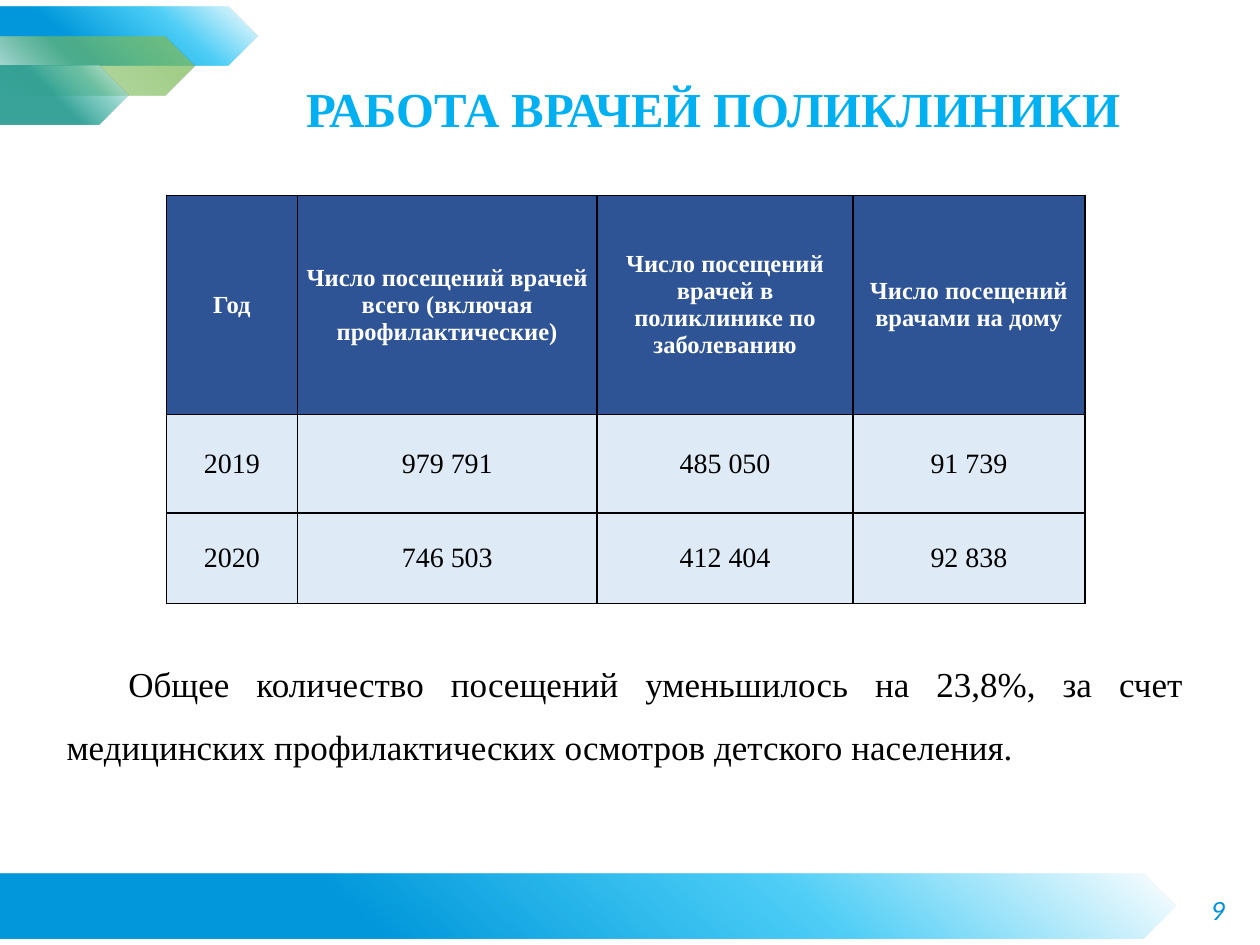
import pptx
import pptx.util
import pptx.oxml
import pptx.oxml.ns
import pptx.dml.color
import pptx.enum.shapes
import pptx.enum.text
import lxml.etree

RGBColor = pptx.dml.color.RGBColor
Pt = pptx.util.Pt
PP_ALIGN = pptx.enum.text.PP_ALIGN
MIDDLE = pptx.enum.text.MSO_ANCHOR.MIDDLE
qn = pptx.oxml.ns.qn

COLUMNS, ROWS = 100, 75
UNIT = pptx.util.Inches(0.1)

BLACK = RGBColor(0, 0, 0)
WHITE = RGBColor(0xFF, 0xFF, 0xFF)
SKY = RGBColor(0x00, 0xB0, 0xF0)
NUMBER_BLUE = RGBColor(0x04, 0x93, 0xDA)
HEADER_BLUE = RGBColor(0x2F, 0x54, 0x96)
PALE_BLUE = RGBColor(0xDE, 0xEA, 0xF6)
DEEP_BLUE = RGBColor(0x03, 0x98, 0xDB)
CYAN = RGBColor(0x05, 0xBA, 0xF3)
GREEN = RGBColor(0x7D, 0xBB, 0x59)
TEAL = RGBColor(0x22, 0x9A, 0x8F)
LIGHT_TEAL = RGBColor(0x3C, 0xB0, 0xA2)

SERIF = "Times New Roman"
BLUE_STOPS = [(31, DEEP_BLUE, 100), (68, CYAN, 70), (100, WHITE, 70)]
GREEN_STOPS = [(0, WHITE, 81), (43, GREEN, 59), (100, GREEN, 77)]
TEAL_STOPS = [(44, TEAL, 89), (70, LIGHT_TEAL, 61), (100, WHITE, 70)]

HEADERS = [
    "Год",
    "Число посещений врачей всего (включая профилактические)",
    "Число посещений врачей в поликлинике по заболеванию",
    "Число посещений врачами на дому",
]
VISITS = [
    ["2019", "979 791", "485 050", "91 739"],
    ["2020", "746 503", "412 404", "92 838"],
]
COLUMN_SHARES = [1.04, 2.38, 2.03, 1.84]
ROW_SHARES = [1.74, 0.78, 0.72]


def grid(*values):
    return [int(v * UNIT) for v in values]


def set_font(p, size, color, name=SERIF, bold=False, italic=False):
    p.font.size = Pt(size)
    p.font.name = name
    p.font.bold = bold
    p.font.italic = italic
    p.font.color.rgb = color


def add_gradient(sp, stops, angle=None):
    sub = lxml.etree.SubElement
    grad = lxml.etree.Element(qn("a:gradFill"), rotWithShape="1")
    gs_list = sub(grad, qn("a:gsLst"))
    for position, color, alpha in stops:
        gs = sub(gs_list, qn("a:gs"), pos=str(position * 1000))
        clr = sub(gs, qn("a:srgbClr"), val=str(color))
        if alpha < 100:
            sub(clr, qn("a:alpha"), val=str(alpha * 1000))
    if angle is None:
        circle = sub(grad, qn("a:path"), path="circle")
        sub(circle, qn("a:fillToRect"), t="100000", r="100000")
    else:
        sub(grad, qn("a:lin"), ang=str(angle * 60000), scaled="0")
    sp._element.spPr.find(qn("a:prstGeom")).addnext(grad)


def add_ribbon(s, box, stops, angle=None):
    sp = s.shapes.add_shape(pptx.enum.shapes.MSO_SHAPE.PENTAGON, *grid(*box))
    sp.shadow.inherit = False
    sp.line.fill.background()
    add_gradient(sp, stops, angle)


def add_text(s, box, text, align):
    tf = s.shapes.add_textbox(*grid(*box)).text_frame
    tf.word_wrap = True
    p = tf.paragraphs[0]
    p.text = text
    p.alignment = align
    return tf, p


def add_title(s, box):
    tf, p = add_text(s, box, "РАБОТА ВРАЧЕЙ ПОЛИКЛИНИКИ", PP_ALIGN.CENTER)
    tf.vertical_anchor = MIDDLE
    set_font(p, 27.9, SKY, bold=True)


def add_page_number(s, box):
    tf, p = add_text(s, box, "9", PP_ALIGN.CENTER)
    tf.vertical_anchor = MIDDLE
    set_font(p, 16, NUMBER_BLUE, "Calibri", italic=True)


def add_conclusion(s, box):
    text = ("Общее количество посещений уменьшилось на 23,8%, за счет "
            "медицинских профилактических осмотров детского населения.")
    tf, p = add_text(s, box, text, PP_ALIGN.JUSTIFY)
    tf.auto_size = pptx.enum.text.MSO_AUTO_SIZE.SHAPE_TO_FIT_TEXT
    p.line_spacing = 1.5
    p._p.get_or_add_pPr().set("indent", str(grid(4.9)[0]))
    set_font(p, 20, BLACK)


def add_borders(cell):
    tc_pr = cell._tc.get_or_add_tcPr()
    for i, side in enumerate(("lnL", "lnR", "lnT", "lnB")):
        ln = lxml.etree.Element(qn("a:" + side), w=str(Pt(1)))
        fill = lxml.etree.SubElement(ln, qn("a:solidFill"))
        lxml.etree.SubElement(fill, qn("a:srgbClr"), val=str(BLACK))
        tc_pr.insert(i, ln)


def add_cell(cell, text, is_header):
    cell.fill.solid()
    cell.fill.fore_color.rgb = HEADER_BLUE if is_header else PALE_BLUE
    cell.vertical_anchor = MIDDLE
    cell.margin_left = cell.margin_right = grid(0.7)[0]
    cell.margin_top = cell.margin_bottom = 0
    p = cell.text_frame.paragraphs[0]
    p.text = text
    p.alignment = PP_ALIGN.CENTER
    set_font(p, 14 if is_header else 16, WHITE if is_header else BLACK, bold=is_header)
    add_borders(cell)


def add_visits_table(s, box):
    rows = [HEADERS] + VISITS
    left, top, width, height = grid(*box)
    table = s.shapes.add_table(len(rows), len(HEADERS), left, top, width, height).table
    table.horz_banding = False
    for column, share in zip(table.columns, COLUMN_SHARES):
        column.width = int(width * share / sum(COLUMN_SHARES))
    for row, share in zip(table.rows, ROW_SHARES):
        row.height = int(height * share / sum(ROW_SHARES))
    for i, texts in enumerate(rows):
        for j, text in enumerate(texts):
            add_cell(table.cell(i, j), text, i == 0)


def main():
    prs = pptx.Presentation()
    prs.slide_width, prs.slide_height = grid(COLUMNS, ROWS)
    s = prs.slides.add_slide(prs.slide_layouts[6])
    add_ribbon(s, (0, 0.5, 20.4, 4.7), BLUE_STOPS, 310)
    add_ribbon(s, (0, 69.3, 93.3, 5.2), BLUE_STOPS, 310)
    add_ribbon(s, (0, 2.9, 15.4, 4.7), GREEN_STOPS)
    add_ribbon(s, (0, 5.2, 10.2, 4.7), TEAL_STOPS)
    add_title(s, (13.2, 6.2, 86.8, 4.7))
    add_page_number(s, (93.3, 69.8, 6.7, 4.7))
    add_conclusion(s, (4.3, 50.4, 90.6, 11.1))
    add_visits_table(s, (13.2, 15.5, 72.9, 32.4))
    prs.save("out.pptx")


if __name__ == "__main__":
    main()
